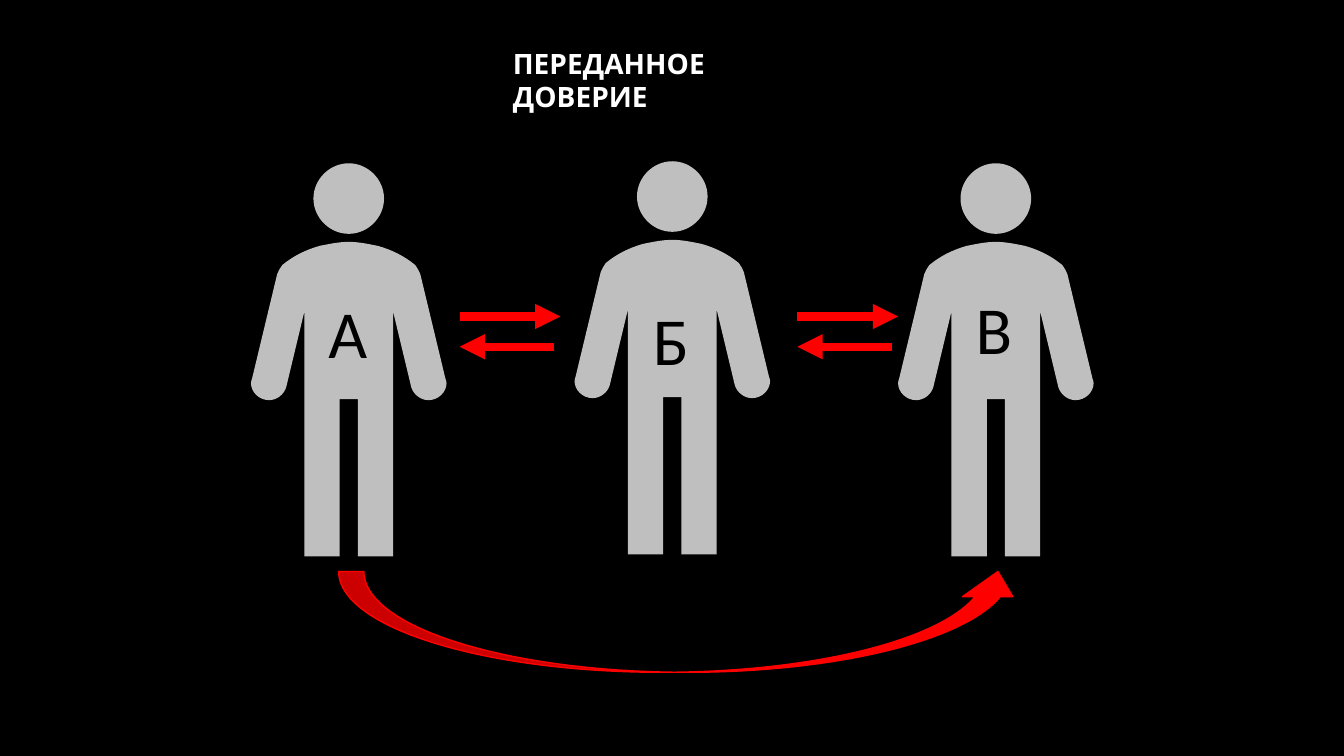
from lxml import etree
from pptx import Presentation
from pptx.dml.color import RGBColor
from pptx.enum.shapes import MSO_CONNECTOR, MSO_SHAPE
from pptx.enum.text import MSO_AUTO_SIZE
from pptx.oxml.ns import qn
from pptx.util import Inches, Pt

BLACK, WHITE, GREY, RED = "000000", "FFFFFF", "BFBFBF", "FF0000"

TITLE = ("ПЕРЕДАННОЕ ДОВЕРИЕ", (4.99, 0.41, 3.36, 0.44))
TITLE_FONT = {"name": "Quicksand", "size": Pt(20), "bold": True}
LETTER_FONT = {"name": "Calibri", "size": Pt(48)}

# centre x and top of each figure, from back to front
FIGURES = [(6.67, 1.6), (9.88, 1.62), (3.46, 1.62)]
LETTERS = [
    ("А", (3.16, 2.84, 0.59, 0.91)),
    ("Б", (6.38, 2.91, 0.56, 0.91)),
    ("В", (9.58, 2.8, 0.57, 0.91)),
]
# start x, end x, y
ARROWS = [
    (4.56, 5.56, 3.14),
    (7.91, 8.91, 3.14),
    (8.85, 7.91, 3.44),
    (5.5, 4.56, 3.44),
]
TRANSFER = (3.36, 5.67, 6.79, 1)

# Right half of each outline, relative to (centre x, top): a segment of
# one point is a straight line, one of three points is a Bezier curve.
BODY_START = (0, 0.78)
BODY_HALF = [
    [(0.1, 0.78), (0.19, 0.8), (0.29, 0.82)],
    [(0.43, 0.86), (0.55, 0.92), (0.66, 1.01)],
    [(0.68, 1.04), (0.7, 1.07), (0.71, 1.1)],
    [(0.96, 2.14)],
    [(0.96, 2.14), (0.97, 2.16), (0.97, 2.18)],
    [(0.97, 2.27), (0.89, 2.35), (0.79, 2.35)],
    [(0.71, 2.35), (0.64, 2.29), (0.62, 2.22)],
    [(0.44, 1.47)],
    [(0.44, 3.9)],
    [(0.09, 3.9)],
    [(0.09, 2.34)],
]
HEAD_START = (0, 0)
HEAD_HALF = [
    [(0.19, 0), (0.35, 0.16), (0.35, 0.35)],
    [(0.35, 0.54), (0.19, 0.7), (0, 0.7)],
]


def rgb(color):
    return RGBColor.from_string(color)


def with_mirror(start, half):
    """Return the segments of the whole outline, its left half mirrored."""
    points = [start] + [pt for segment in half for pt in segment]
    back = [(-x, y) for x, y in reversed(points)]
    segments = list(half)
    if back[0] != points[-1]:
        segments.append([back[0]])
    position = 1
    for segment in reversed(half):
        segments.append(back[position:position + len(segment)])
        position += len(segment)
    return segments


def add_figure(s, center, top):
    def place(pt):
        return Inches(center + pt[0]), Inches(top + pt[1])

    body = with_mirror(BODY_START, BODY_HALF)
    head = with_mirror(HEAD_START, HEAD_HALF)
    builder = s.shapes.build_freeform(*place(BODY_START))
    builder.add_line_segments([place(pt) for segment in body for pt in segment])
    builder.move_to(*place(HEAD_START))
    builder.add_line_segments([place(pt) for segment in head for pt in segment])
    sp = builder.convert_to_shape()
    join_curves(sp, body + head)
    sp.shadow.inherit = False
    sp.fill.solid()
    sp.fill.fore_color.rgb = rgb(GREY)
    sp.line.fill.background()


def join_curves(sp, segments):
    """Turn each run of three points that forms a curve into one Bezier."""
    lines = iter(list(sp._element.iter(qn("a:lnTo"))))
    for segment in segments:
        steps = [next(lines) for _ in segment]
        if len(steps) == 3:
            curve = etree.Element(qn("a:cubicBezTo"))
            steps[0].addprevious(curve)
            for step in steps:
                curve.append(step[0])
                step.getparent().remove(step)


def add_text(s, text, box, font, color, wrap=False):
    tf = s.shapes.add_textbox(*map(Inches, box)).text_frame
    tf.word_wrap = wrap
    tf.auto_size = MSO_AUTO_SIZE.SHAPE_TO_FIT_TEXT
    r = tf.paragraphs[0].add_run()
    r.text = text
    for key, value in font.items():
        setattr(r.font, key, value)
    r.font.color.rgb = rgb(color)


def add_arrow(s, x1, x2, y):
    line = s.shapes.add_connector(MSO_CONNECTOR.STRAIGHT, *map(Inches, (x1, y, x2, y)))
    line.line.width = Pt(6)
    line.line.color.rgb = rgb(RED)
    etree.SubElement(line.line._get_or_add_ln(), qn("a:tailEnd"), type="triangle")
    etree.SubElement(line._element.spPr, qn("a:effectLst"))


def add_transfer(s):
    sp = s.shapes.add_shape(MSO_SHAPE.CURVED_UP_ARROW, *map(Inches, TRANSFER))
    sp.shadow.inherit = False
    sp.fill.solid()
    sp.fill.fore_color.rgb = rgb(RED)
    sp.line.color.rgb = rgb(RED)
    sp.line.width = Pt(1)


def main():
    prs = Presentation()
    prs.slide_width, prs.slide_height = Inches(40 / 3), Inches(7.5)
    s = prs.slides.add_slide(prs.slide_layouts[6])
    s.background.fill.solid()
    s.background.fill.fore_color.rgb = rgb(BLACK)

    for figure in FIGURES:
        add_figure(s, *figure)
    for letter, box in LETTERS:
        add_text(s, letter, box, LETTER_FONT, BLACK)
    for arrow in ARROWS:
        add_arrow(s, *arrow)
    add_transfer(s)
    add_text(s, *TITLE, TITLE_FONT, WHITE, wrap=True)
    prs.save("out.pptx")


if __name__ == "__main__":
    main()
